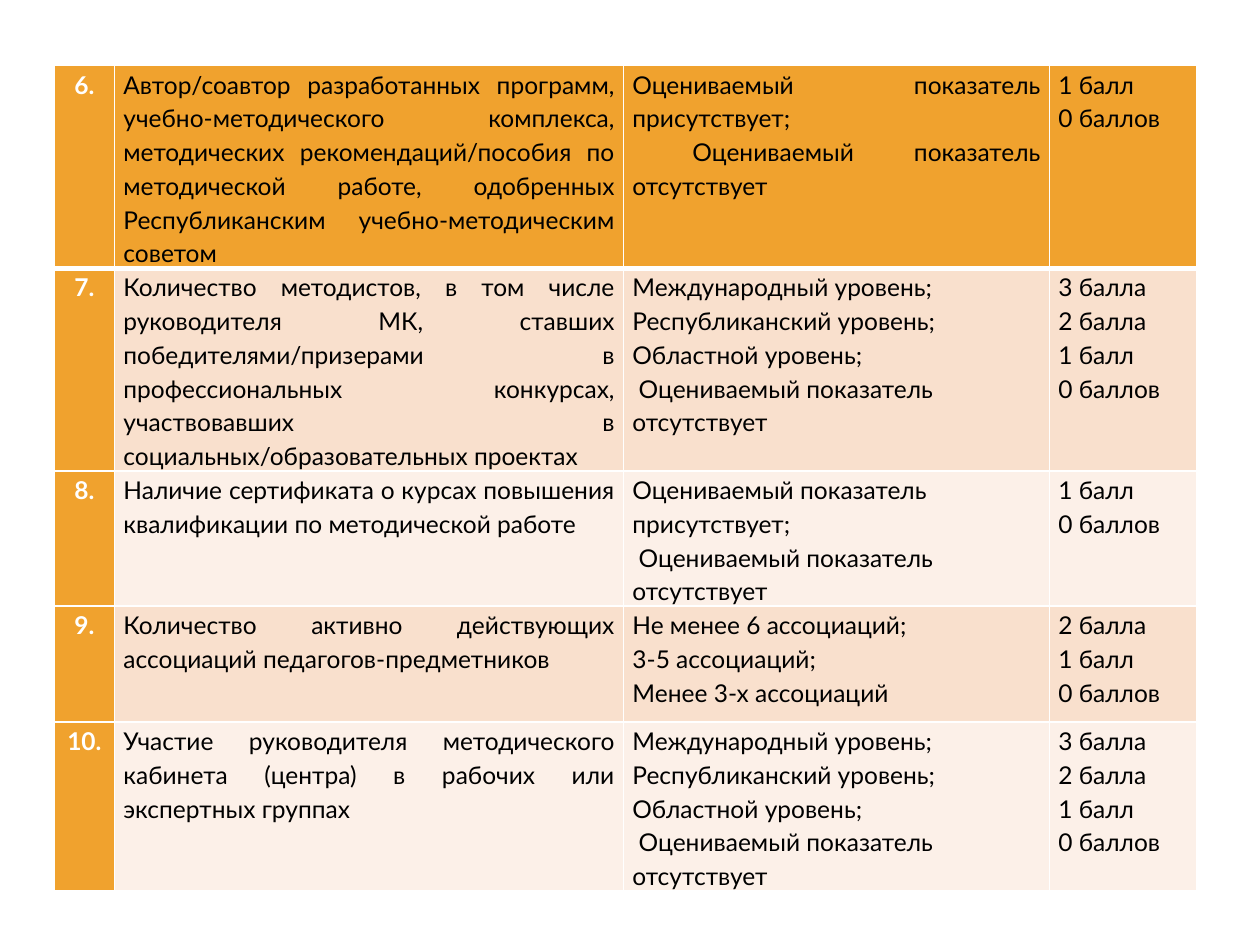
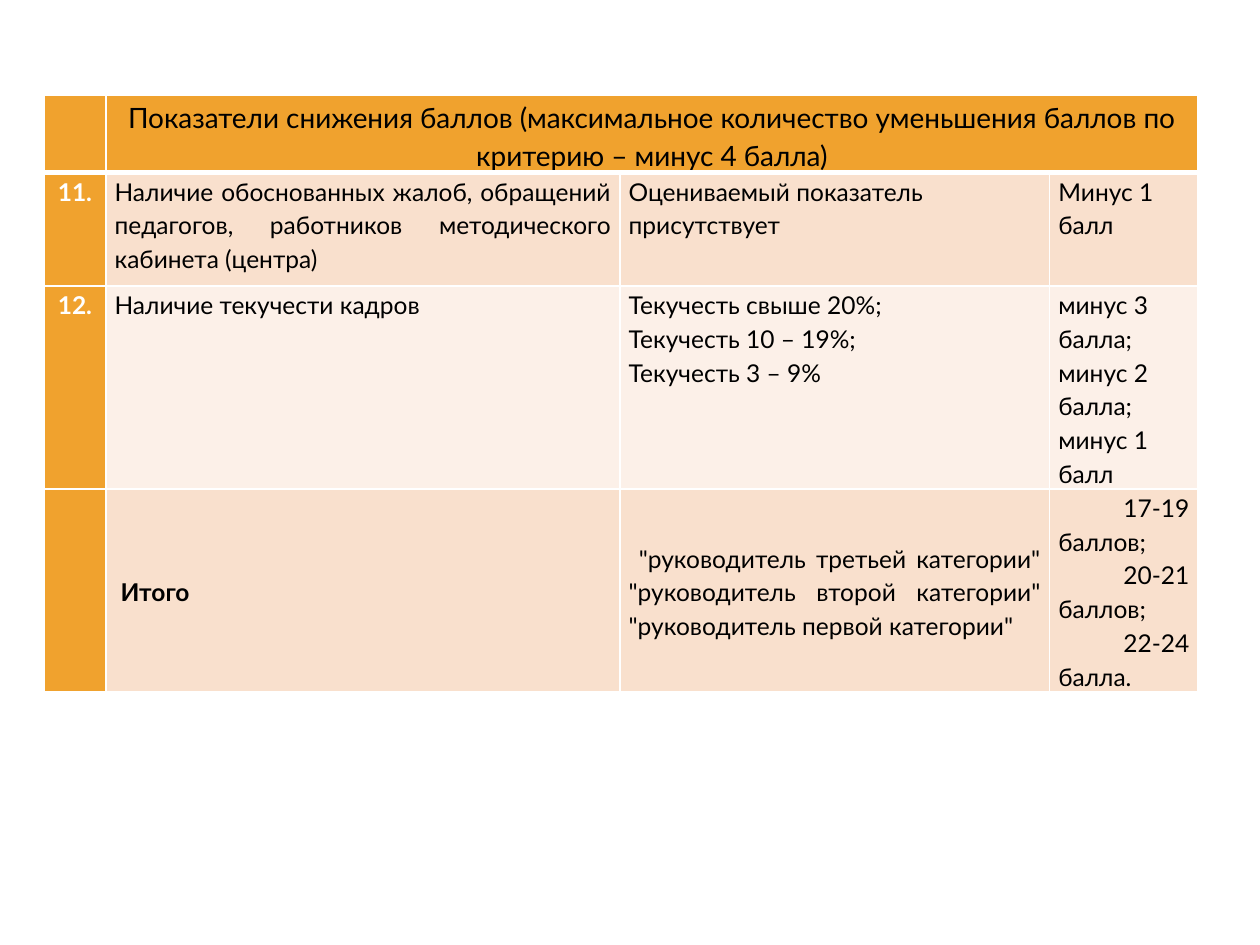
from dataclasses import dataclass, replace

from lxml.etree import SubElement
from pptx import Presentation
from pptx.dml.color import RGBColor
from pptx.enum.text import MSO_ANCHOR as Anchor, PP_ALIGN as Align
from pptx.oxml.ns import qn
from pptx.util import Pt

PX = 9144  # 100 px to the inch
LINE_BREAK = "\v"


@dataclass(frozen=True)
class Theme:
    font: str = "Lato"
    accent: str = "F0A22E"
    bands: tuple = ("F9E0CD", "FCF0E8")
    text: str = "000000"
    light: str = "FFFFFF"
    body_size: int = 14
    heading_size: int = 16
    line_spacing: float = 1.15
    border: int = 1
    heavy_border: int = 3
    inset: int = 7


@dataclass(frozen=True)
class Entry:
    """Content of one table cell, with the ways it differs from plain body text."""
    paragraphs: tuple = ("",)
    align: Align = Align.LEFT
    anchor: Anchor = Anchor.TOP
    bold: bool = False
    light: bool = False
    heading: bool = False


def lines(*texts):
    return Entry((LINE_BREAK.join(texts),))


def justified(*paragraphs):
    return Entry(paragraphs, Align.JUSTIFY)


def number(value):
    return Entry((f"{value}.",), Align.CENTER, bold=True, light=True)


def criteria_rows(first_number, criteria):
    """Number the criteria and justify their names."""
    return [[number(position), justified(name), levels, points]
            for position, (name, levels, points) in enumerate(criteria, first_number)]


class Deck:
    def __init__(self, theme):
        self.theme = theme
        self.presentation = Presentation()
        self.presentation.slide_width = 1000 * PX
        self.presentation.slide_height = 750 * PX
        self.slide = None

    def add_slide(self):
        self.slide = self.presentation.slides.add_slide(self.presentation.slide_layouts[6])

    def add_table(self, left, top, widths, heights, rows):
        """Draw a table whose first row and first column are filled with the accent."""
        table = self.slide.shapes.add_table(
            len(rows), len(widths), left * PX, top * PX,
            sum(widths) * PX, sum(heights) * PX).table
        table.first_row = table.horz_banding = False
        for column, width in zip(table.columns, widths):
            column.width = width * PX
        for row, height in zip(table.rows, heights):
            row.height = height * PX
        for row_index, entries in enumerate(rows):
            for column_index, entry in enumerate(entries):
                cell = table.cell(row_index, column_index)
                self.set_borders(cell, row_index)
                is_accent = row_index == 0 or column_index == 0
                band = self.theme.bands[(row_index - 1) % 2]
                cell.fill.solid()
                cell.fill.fore_color.rgb = RGBColor.from_string(
                    self.theme.accent if is_accent else band)
                self.set_text(cell, entry)
        return table

    def set_borders(self, cell, row_index):
        """Outline a cell, with a heavy line between the first row and the second."""
        properties = cell._tc.get_or_add_tcPr()
        for side in ("lnL", "lnR", "lnT", "lnB"):
            is_heavy = (row_index, side) in ((0, "lnB"), (1, "lnT"))
            width = self.theme.heavy_border if is_heavy else self.theme.border
            line = SubElement(properties, qn(f"a:{side}"), w=str(int(Pt(width))))
            fill = SubElement(line, qn("a:solidFill"))
            SubElement(fill, qn("a:srgbClr"), val=self.theme.light)

    def set_text(self, cell, entry):
        theme = self.theme
        cell.margin_left = cell.margin_right = theme.inset * PX
        cell.margin_top = cell.margin_bottom = 0
        cell.vertical_anchor = entry.anchor
        frame = cell.text_frame
        for index, text in enumerate(entry.paragraphs):
            paragraph = frame.add_paragraph() if index else frame.paragraphs[0]
            paragraph.text = text
            paragraph.alignment = entry.align
            paragraph.line_spacing = theme.line_spacing
            font = paragraph.font
            font.name = theme.font
            font.size = Pt(theme.heading_size if entry.heading else theme.body_size)
            font.bold = entry.bold
            font.color.rgb = RGBColor.from_string(theme.light if entry.light else theme.text)


PRESENT = "Оцениваемый показатель присутствует"
ABSENT = " Оцениваемый показатель отсутствует"
PRESENCE = lines(f"{PRESENT};", ABSENT)
PRESENCE_POINTS = lines("1 балл", "0 баллов")
SCOPE = lines("Международный уровень;", "Республиканский уровень;", "Областной уровень;", ABSENT)
SCOPE_POINTS = lines("3 балла", "2 балла", "1 балл", "0 баллов")


def add_criteria_slide(deck):
    deck.add_slide()
    rows = criteria_rows(6, [
        ("Автор/соавтор разработанных программ, учебно-методического комплекса, "
         "методических рекомендаций/пособия по методической работе, одобренных "
         "Республиканским учебно-методическим советом",
         replace(PRESENCE, align=Align.JUSTIFY), PRESENCE_POINTS),
        ("Количество методистов, в том числе руководителя МК, ставших "
         "победителями/призерами в профессиональных конкурсах, участвовавших "
         "в социальных/образовательных проектах", SCOPE, SCOPE_POINTS),
        ("Наличие сертификата о курсах повышения квалификации по методической работе",
         PRESENCE, PRESENCE_POINTS),
        ("Количество активно действующих ассоциаций педагогов-предметников",
         lines("Не менее 6 ассоциаций;", "3-5 ассоциаций;", "Менее 3-х ассоциаций"),
         lines("2 балла", "1 балл", "0 баллов")),
        ("Участие руководителя методического кабинета (центра) в рабочих или "
         "экспертных группах", SCOPE, SCOPE_POINTS),
    ])
    deck.add_table(43, 52, (48, 404, 338, 117), (123, 123, 60, 92, 123), rows)


def add_deductions_slide(deck):
    deck.add_slide()
    heading = Entry(("Показатели снижения баллов (максимальное количество уменьшения "
                     "баллов по критерию – минус 4 балла)",), Align.CENTER, heading=True)
    deductions = criteria_rows(11, [
        ("Наличие обоснованных жалоб, обращений педагогов, работников методического "
         "кабинета (центра)", lines(PRESENT), lines("Минус 1 балл")),
        ("Наличие текучести кадров",
         lines("Текучесть свыше 20%;", "Текучесть 10 – 19%;", "Текучесть 3 – 9%"),
         lines("минус 3 балла;", "минус 2 балла;", "минус 1 балл")),
    ])
    categories = justified(' "руководитель третьей категории" "руководитель второй категории" '
                           '"руководитель первой категории"')
    total = [
        Entry(),
        replace(justified(" Итого"), bold=True, anchor=Anchor.MIDDLE),
        replace(categories, anchor=Anchor.MIDDLE),
        justified(" 17-19 баллов;", " 20-21 баллов;", " 22-24 балла."),
    ]
    rows = [[Entry(), heading, Entry(), Entry()], *deductions, total]
    table = deck.add_table(35, 76, (49, 408, 341, 118), (43, 90, 137, 155), rows)
    table.cell(0, 1).merge(table.cell(0, 3))


def main():
    deck = Deck(Theme())
    add_criteria_slide(deck)
    add_deductions_slide(deck)
    deck.presentation.save("out.pptx")


if __name__ == "__main__":
    main()
